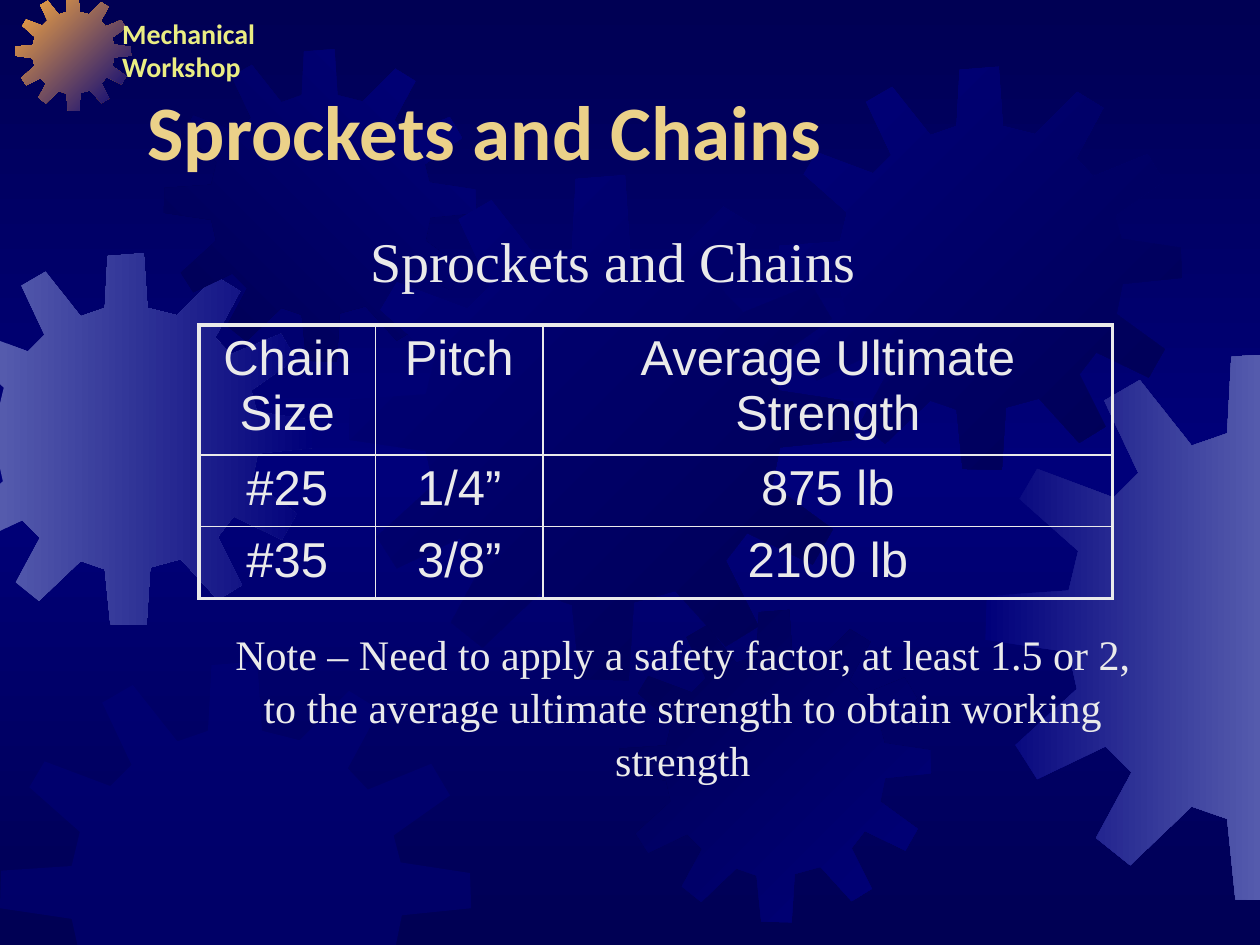
"""Build the Sprockets and Chains slide with its gear backdrop."""
from copy import deepcopy

from lxml.etree import SubElement
from pptx import Presentation
from pptx.dml.color import RGBColor
from pptx.enum.text import MSO_ANCHOR, MSO_AUTO_SIZE, PP_ALIGN
from pptx.oxml.ns import qn
from pptx.util import Inches, Pt

NIGHT = RGBColor(0x00, 0x00, 0x54)
NAVY = RGBColor(0x00, 0x00, 0x7A)
STEEL = RGBColor(0x55, 0x5B, 0xAD)
ORANGE = RGBColor(0xFC, 0xAB, 0x40)
PALE = RGBColor(0xEA, 0xEA, 0xEA)
GOLD = RGBColor(0xEB, 0xD1, 0x89)
LEMON = RGBColor(0xEA, 0xED, 0x83)
WIDTH, HEIGHT = 10, 7.5

GEAR = [
    (255, 67), (223, 59), (219, 0), (180, 3), (177, 59), (151, 68),
    (113, 20), (87, 35), (112, 88), (94, 106), (38, 85), (25, 107),
    (68, 145), (61, 174), (1, 178), (0, 210), (61, 219), (67, 246),
    (22, 287), (38, 312), (88, 288), (107, 307), (81, 355), (106, 375),
    (151, 332), (177, 341), (183, 400), (222, 401), (226, 339), (259, 330),
    (299, 374), (325, 358), (299, 306), (316, 284), (368, 309), (384, 281),
    (336, 246), (342, 216), (401, 210), (400, 180), (341, 171), (335, 148),
    (383, 114), (367, 87), (313, 109), (296, 91), (323, 41), (297, 25),
]
SPAN = 401


def clip(points, axis, limit, sign):
    """Cut an outline at one edge of the slide."""
    kept = []
    for start, end in zip(points, points[1:] + points[:1]):
        near = sign * (start[axis] - limit)
        far = sign * (end[axis] - limit)
        if near >= 0:
            kept.append(start)
        if near * far < 0:
            part = near / (near - far)
            kept.append(tuple(a + part * (b - a) for a, b in zip(start, end)))
    return kept


def write(frame, text, look, color, align):
    """Fill a text frame with one formatted paragraph."""
    for side in ("left", "top", "right", "bottom"):
        setattr(frame, f"margin_{side}", Inches(0.05))
    frame.text = text
    para = frame.paragraphs[0]
    para.alignment = align
    for name, value in look.items():
        setattr(para.font, name, value)
    para.font.color.rgb = color
    return para


deck = Presentation()
deck.slide_width, deck.slide_height = Inches(WIDTH), Inches(HEIGHT)
slide = deck.slides.add_slide(deck.slide_layouts[5])
shapes = slide.shapes

back = slide.background.fill
back.gradient()
back.gradient_angle = 90
stops = slide.element.find(".//" + qn("a:gsLst"))
stops.append(deepcopy(stops[-1]))
for stop, place, color in zip(back.gradient_stops, (0, 0.5, 1), (NIGHT, NAVY, NIGHT)):
    stop.position = place
    stop.color.rgb = color

gears = [
    (-0.47, 2.01, 2.95, (STEEL, NAVY), 0),
    (0.12, -0.04, 0.92, (ORANGE, NAVY), 45),
    (1.3, 0.39, 2.48, (NIGHT, NAVY), 315),
    (2.77, 1.39, 4.01, (NAVY, NIGHT), 45),
    (0, 5.25, 3.74, None, 0),
    (4.91, 4.84, 2.48, (NIGHT, NAVY), 45),
    (6.18, 0.53, 3.2, (NAVY, NIGHT), 45),
    (7.82, 2.8, 4.35, (NAVY, STEEL), 0),
]
for left, top, size, shades, angle in gears:
    rim = [(left + x * size / SPAN, top + y * size / SPAN) for x, y in GEAR]
    for axis, limit, sign in ((0, 0, 1), (0, WIDTH, -1), (1, 0, 1), (1, HEIGHT, -1)):
        rim = clip(rim, axis, limit, sign)
    rim = [(Inches(x), Inches(y)) for x, y in rim]
    pen = shapes.build_freeform(*rim[0])
    pen.add_line_segments(rim[1:], close=True)
    gear = pen.convert_to_shape()
    gear.shadow.inherit = False
    gear.line.fill.background()
    if shades:
        gear.fill.gradient()
        gear.fill.gradient_angle = (360 - angle) % 360
        for stop, color in zip(gear.fill.gradient_stops, shades):
            stop.color.rgb = color
    else:
        gear.fill.solid()
        gear.fill.fore_color.rgb = NAVY
        tint = gear.element.spPr.find(".//" + qn("a:srgbClr"))
        SubElement(tint, qn("a:alpha"), val="50000")

rows = [
    ("Chain Size", "Pitch", "Average Ultimate Strength"),
    ("#25", "1/4”", "875 lb"),
    ("#35", "3/8”", "2100 lb"),
]
grid = shapes.add_table(
    3, 3, Inches(1.58), Inches(2.58), Inches(7.25), Inches(2.17)
).table
grid.first_row = grid.horz_banding = False
for column, size in zip(grid.columns, (1.4, 1.33, 4.52)):
    column.width = Inches(size)
for row, size in zip(grid.rows, (1.03, 0.57, 0.57)):
    row.height = Inches(size)
for r, texts in enumerate(rows):
    for c, text in enumerate(texts):
        cell = grid.cell(r, c)
        for side in ("left", "top", "right", "bottom"):
            setattr(cell, f"margin_{side}", Inches(0.05))
        look = {"name": "Arial", "size": Pt(28)}
        write(cell.text_frame, text, look, PALE, PP_ALIGN.CENTER)
        props = cell._tc.get_or_add_tcPr()
        edges = {"L": c == 0, "R": c == 2, "T": r == 0, "B": r == 2}
        for side, outer in edges.items():
            weight = Pt(2.25 if outer else 1)
            line = SubElement(props, qn(f"a:ln{side}"), w=str(weight))
            paint = SubElement(line, qn("a:solidFill"))
            SubElement(paint, qn("a:srgbClr"), val=str(PALE))
        cell.fill.background()

note = (
    "Note – Need to apply a safety factor, at least 1.5 or 2, "
    "to the average ultimate strength to obtain working strength"
)
serif = "Times New Roman"
labels = [
    ("Sprockets and Chains", (2.88, 1.75, 3.97, 0.6),
     {"name": serif, "size": Pt(32)}, PALE, PP_ALIGN.CENTER, False, 1),
    (note, (1.67, 4.92, 7.5, 1.21),
     {"name": serif, "size": Pt(24)}, PALE, PP_ALIGN.CENTER, True, 1.05),
    ("Mechanical\vWorkshop", (0.92, 0.08, 2.02, 0.63),
     {"name": "Calibri", "size": Pt(16), "bold": True}, LEMON, PP_ALIGN.LEFT, True, 1),
]
for text, box, look, color, align, wrap, gap in labels:
    frame = shapes.add_textbox(*map(Inches, box)).text_frame
    frame.word_wrap = wrap
    write(frame, text, look, color, align).line_spacing = gap

title = shapes.title
title.left, title.top = Inches(1.12), Inches(0.37)
title.width, title.height = Inches(8.5), Inches(1.08)
frame = title.text_frame
frame.auto_size = MSO_AUTO_SIZE.NONE
frame.vertical_anchor = MSO_ANCHOR.BOTTOM
look = {"name": "Calibri", "size": Pt(44), "bold": True}
write(frame, "Sprockets and Chains", look, GOLD, PP_ALIGN.LEFT)
title.element.getparent().append(title.element)

deck.save("out.pptx")
